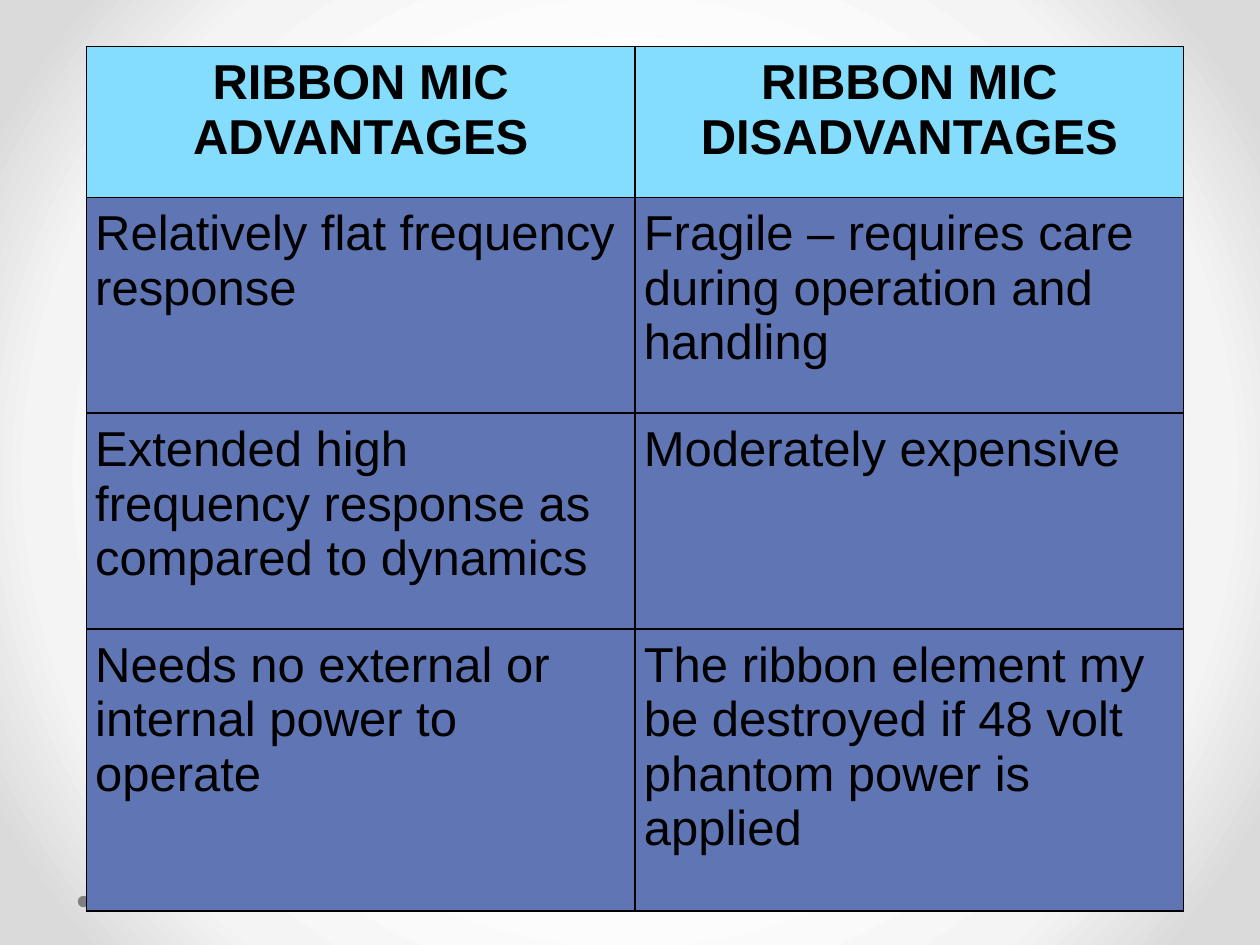
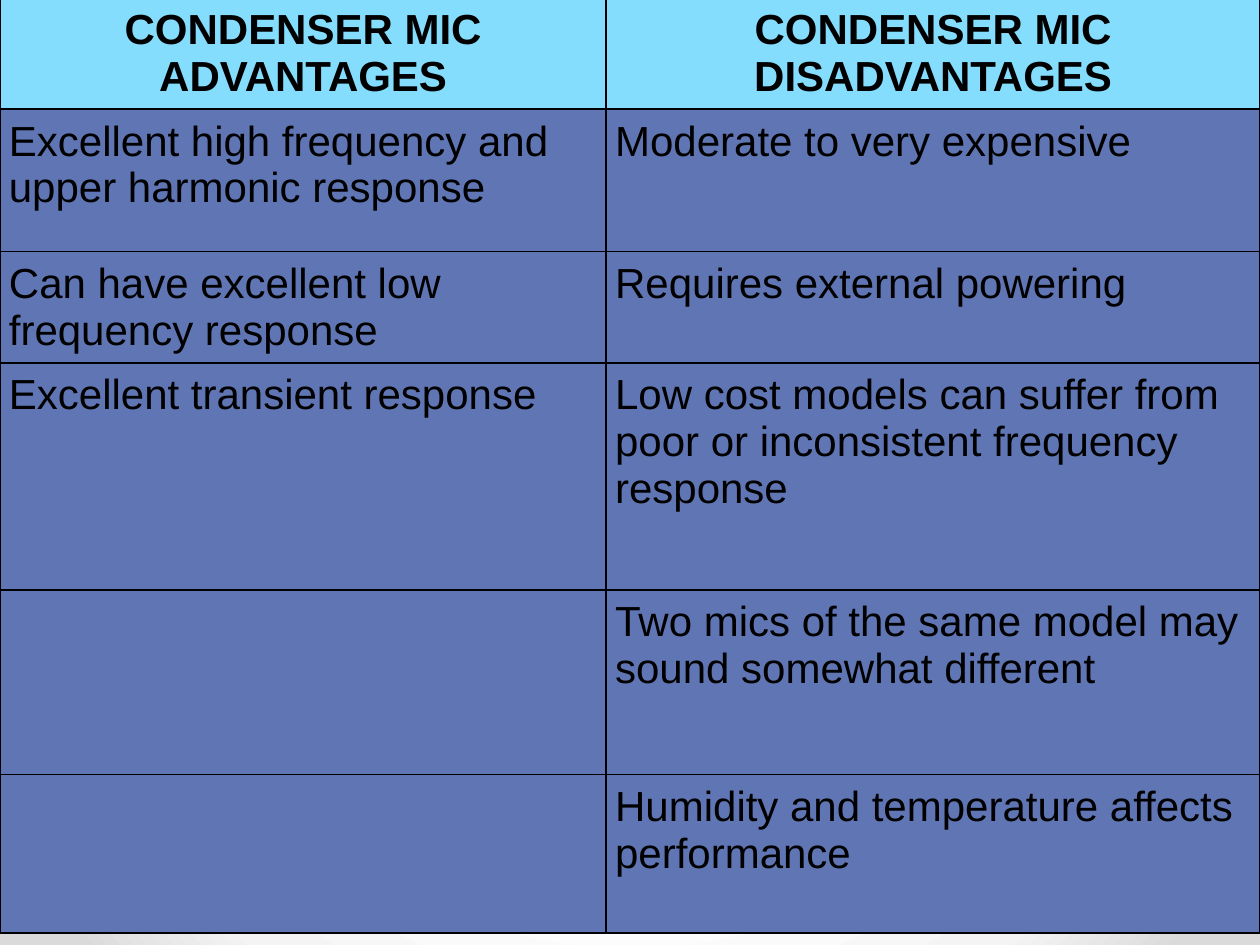
from pptx import Presentation
from pptx import util as u
from pptx.dml.color import RGBColor
from pptx.enum import shapes, text
from pptx.oxml import parse_xml
from pptx.oxml.ns import nsdecls, qn

Cm = u.Cm
COLORS = {
    "ink": "000000",
    "header": "84DDFD",
    "body": "6076B4",
    "dot": "808080",
}
BACKDROP = [(50, "FFFFFF"), (76, "F4F4F4"), (92, "DADADA")]
FONT = "Arial"
INSET = 0.18

RIBBON = [
    (["RIBBON MIC", "ADVANTAGES"], ["RIBBON MIC", "DISADVANTAGES"]),
    (["Relatively flat frequency response"],
     ["Fragile – requires care during operation and handling"]),
    (["Extended high frequency response as compared to dynamics"],
     ["Moderately expensive"]),
    (["Needs no external or internal power to operate"],
     ["The ribbon element my be destroyed if 48 volt phantom power is applied"]),
]
CONDENSER = [
    (["CONDENSER MIC", "ADVANTAGES"], ["CONDENSER MIC", "DISADVANTAGES"]),
    (["Excellent high frequency and upper harmonic response"],
     ["Moderate to very expensive"]),
    (["Can have excellent low frequency response"],
     ["Requires external powering"]),
    (["Excellent transient response"],
     ["Low cost models can suffer from poor or inconsistent frequency response"]),
    ([], ["Two mics of the same model may sound somewhat different"]),
    ([], ["Humidity and temperature affects performance"]),
]


def rgb(name):
    return RGBColor.from_string(COLORS[name])


def set_backdrop(master):
    """Radial grey gradient shared by all slides."""
    master.background.fill.solid()
    stops = "".join(f'<a:gs pos="{pos * 1000}"><a:srgbClr val="{color}"/></a:gs>'
                    for pos, color in BACKDROP)
    gradient = parse_xml(
        f'<a:gradFill {nsdecls("a")} rotWithShape="1"><a:gsLst>{stops}</a:gsLst>'
        '<a:path path="circle"><a:fillToRect l="50000" t="50000" r="50000" b="50000"/>'
        '</a:path></a:gradFill>')
    properties = master.element.find(".//" + qn("p:bgPr"))
    properties.replace(properties[0], gradient)


def add_footer_dots(slide):
    for left in (1.57, 23.5):
        dot = slide.shapes.add_shape(shapes.MSO_SHAPE.OVAL, Cm(left), Cm(18.06),
                                     Cm(0.23), Cm(0.23))
        dot.shadow.inherit = False
        dot.fill.solid()
        dot.fill.fore_color.rgb = rgb("dot")
        dot.line.fill.background()


def add_borders(cell):
    properties = cell._tc.get_or_add_tcPr()
    for side in "LRTB":
        properties.append(parse_xml(
            f'<a:ln{side} {nsdecls("a")} w="{u.Pt(1)}"><a:solidFill>'
            f'<a:srgbClr val="{COLORS["ink"]}"/></a:solidFill></a:ln{side}>'))


def fill_cell(cell, lines, size, is_header):
    add_borders(cell)
    cell.fill.solid()
    cell.fill.fore_color.rgb = rgb("header" if is_header else "body")
    cell.margin_left = cell.margin_right = Cm(INSET)
    cell.margin_top = cell.margin_bottom = Cm(INSET)
    cell.text = "\n".join(lines)
    for paragraph in cell.text_frame.paragraphs:
        paragraph.alignment = text.PP_ALIGN.CENTER if is_header else text.PP_ALIGN.LEFT
        paragraph.font.name = FONT
        paragraph.font.size = u.Pt(size)
        paragraph.font.bold = is_header
        paragraph.font.color.rgb = rgb("ink")


def add_comparison(slide, left, top, widths, heights, rows, size):
    """Two-column table of pros and cons, with its corner at left, top."""
    comparison = slide.shapes.add_table(
        len(heights), len(widths), Cm(left), Cm(top),
        Cm(sum(widths)), Cm(sum(heights))).table
    comparison.first_row = comparison.horz_banding = False
    for column, width in zip(comparison.columns, widths):
        column.width = Cm(width)
    for r, (height, entries) in enumerate(zip(heights, rows)):
        comparison.rows[r].height = Cm(height)
        for c, lines in enumerate(entries):
            fill_cell(comparison.cell(r, c), lines, size, r == 0)


def add_mic_slide(deck, **comparison):
    slide = deck.slides.add_slide(deck.slide_layouts[6])
    add_footer_dots(slide)
    add_comparison(slide, **comparison)


def main():
    deck = Presentation()
    deck.slide_width, deck.slide_height = Cm(25.4), Cm(19.05)
    set_backdrop(deck.slide_master)

    # Ribbon microphones
    add_mic_slide(deck, left=1.74, top=0.94, widths=[11.06, 11.06],
                  heights=[3.04, 4.35, 4.35, 5.69], rows=RIBBON, size=28)
    # Condenser microphones
    add_mic_slide(deck, left=0, top=-0.05, widths=[12.22, 13.18],
                  heights=[2.25, 2.87, 2.24, 4.57, 3.72, 3.2],
                  rows=CONDENSER, size=24)
    deck.save("out.pptx")


if __name__ == "__main__":
    main()
